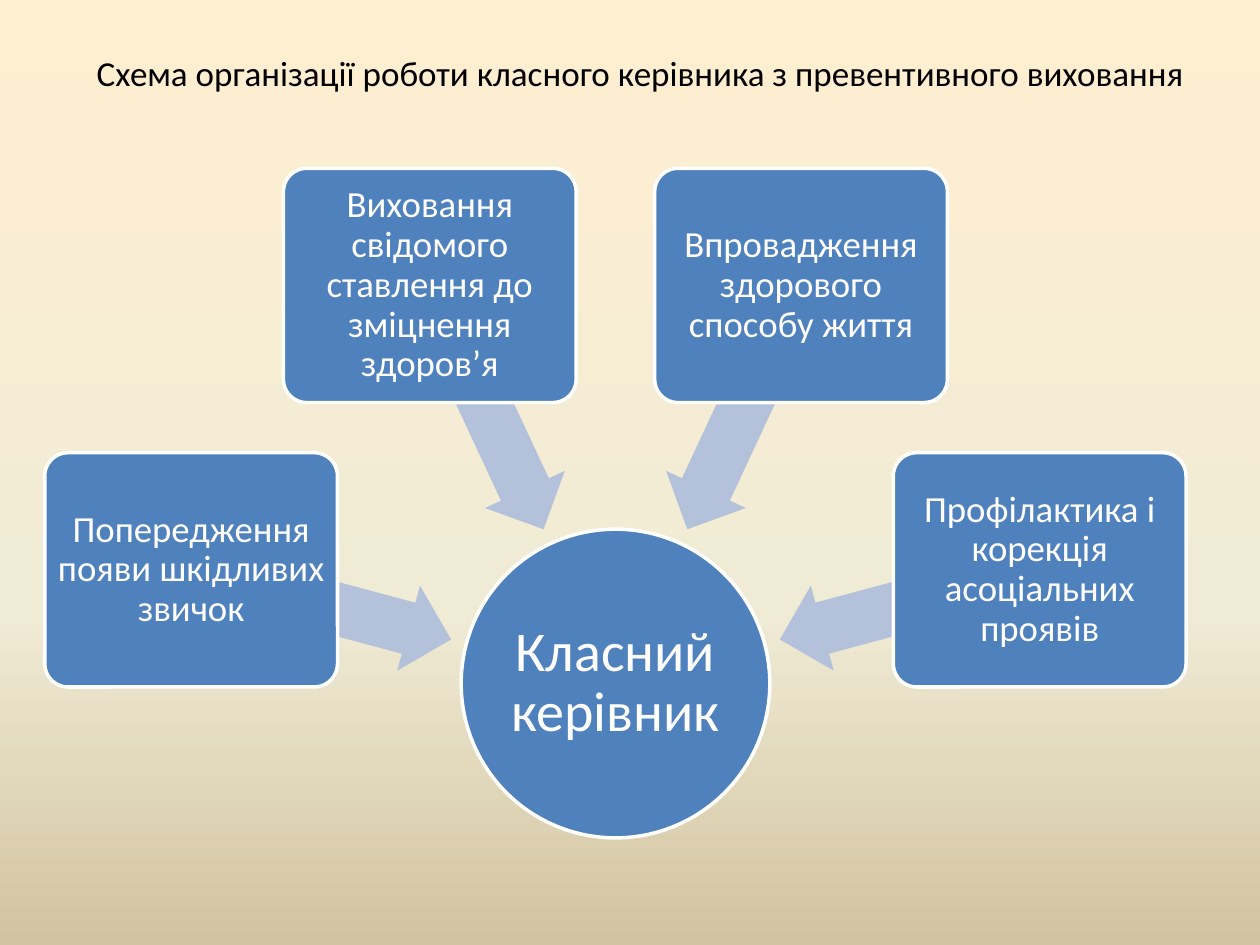
from copy import deepcopy
from dataclasses import dataclass
from math import cos, radians, sin

from pptx import Presentation
from pptx.dml.color import RGBColor
from pptx.enum.shapes import MSO_SHAPE
from pptx.enum.text import MSO_ANCHOR, PP_ALIGN
from pptx.shapes.autoshape import Shape
from pptx.slide import Slide
from pptx.util import Pt

BLUE = RGBColor(0x4F, 0x81, 0xBD)
PALE_BLUE = RGBColor(0xB3, 0xC1, 0xDB)
WHITE = RGBColor(0xFF, 0xFF, 0xFF)
BLACK = RGBColor(0, 0, 0)
BACKDROP = (
    (0, RGBColor(0xFF, 0xEF, 0xD1)),
    (0.65, RGBColor(0xF0, 0xEB, 0xD5)),
    (1, RGBColor(0xD1, 0xC3, 0x9F)),
)
FONT = "Calibri"
HUB_X, HUB_Y, HUB_SIZE = 351.7, 390.6, 176.4
CARD_RADIUS, CARD_WIDTH, CARD_HEIGHT = 251, 167.3, 133.9
ARROW_RADIUS, ARROW_LENGTH, ARROW_HEIGHT = 174.3, 154.1, 50.3


@dataclass(frozen=True)
class Direction:
    """A line of work and its bearing from the hub, clockwise in degrees."""

    label: str
    bearing: float


DIRECTIONS = (
    Direction("Попередження появи шкідливих звичок", 195),
    Direction("Виховання свідомого ставлення до зміцнення здоров’я", 245),
    Direction("Впровадження здорового способу життя", 295),
    Direction("Профілактика і корекція асоціальних проявів", 345),
)


def paint_background(slide: Slide) -> None:
    """Fill the slide with the vertical sand gradient."""
    fill = slide.background.fill
    fill.gradient()
    fill.gradient_angle = 270
    stop_list = slide._element.xpath(".//a:gsLst")[0]
    stop_list.append(deepcopy(stop_list[-1]))
    for stop, (position, color) in zip(fill.gradient_stops, BACKDROP):
        stop.position = position
        stop.color.rgb = color


def style_text(shape: Shape, text: str, size: float, color: RGBColor) -> None:
    """Write one paragraph in the slide font."""
    shape.text_frame.word_wrap = True
    shape.text_frame.text = text
    font = shape.text_frame.paragraphs[0].runs[0].font
    font.name, font.size, font.color.rgb = FONT, Pt(size), color


def add_polar(slide: Slide, kind: MSO_SHAPE, bearing: float, radius: float,
              width: float, height: float, color: RGBColor) -> Shape:
    """Add a filled shape centred at a bearing and radius from the hub."""
    center_x = HUB_X + radius * cos(radians(bearing))
    center_y = HUB_Y + radius * sin(radians(bearing))
    shape = slide.shapes.add_shape(
        kind, Pt(center_x - width / 2), Pt(center_y - height / 2), Pt(width), Pt(height))
    shape.shadow.inherit = False
    shape.fill.solid()
    shape.fill.fore_color.rgb = color
    shape.line.fill.background()
    return shape


def label_node(node: Shape, text: str, size: float) -> None:
    """Give a node its white outline and centred label."""
    node.line.color.rgb = WHITE
    node.line.width = Pt(2)
    style_text(node, text, size, WHITE)
    frame = node.text_frame
    frame.vertical_anchor = MSO_ANCHOR.MIDDLE
    frame.margin_left = frame.margin_right = Pt(1)
    frame.margin_top = frame.margin_bottom = Pt(1)
    frame.paragraphs[0].alignment = PP_ALIGN.CENTER
    frame.paragraphs[0].line_spacing = 0.9


def add_direction(slide: Slide, direction: Direction) -> None:
    """Draw a card and the arrow that leads from it to the hub."""
    arrow = add_polar(slide, MSO_SHAPE.LEFT_ARROW, direction.bearing, ARROW_RADIUS,
                      ARROW_LENGTH, ARROW_HEIGHT, PALE_BLUE)
    arrow.rotation = direction.bearing
    arrow.adjustments[0] = 0.6
    arrow.adjustments[1] = 0.5
    card = add_polar(slide, MSO_SHAPE.ROUNDED_RECTANGLE, direction.bearing, CARD_RADIUS,
                     CARD_WIDTH, CARD_HEIGHT, BLUE)
    card.adjustments[0] = 0.1
    label_node(card, direction.label, 21)


def main() -> None:
    """Build and save the slide."""
    presentation = Presentation()
    presentation.slide_width, presentation.slide_height = Pt(720), Pt(540)
    slide = presentation.slides.add_slide(presentation.slide_layouts[6])
    paint_background(slide)
    title = slide.shapes.add_textbox(Pt(48.2), Pt(25.9), Pt(652.3), Pt(31.7))
    style_text(title, "Схема організації роботи класного керівника з превентивного виховання",
               20, BLACK)
    hub = add_polar(slide, MSO_SHAPE.OVAL, 0, 0, HUB_SIZE, HUB_SIZE, BLUE)
    label_node(hub, "Класний керівник", 32)
    for direction in DIRECTIONS:
        add_direction(slide, direction)
    presentation.save("out.pptx")


if __name__ == "__main__":
    main()
